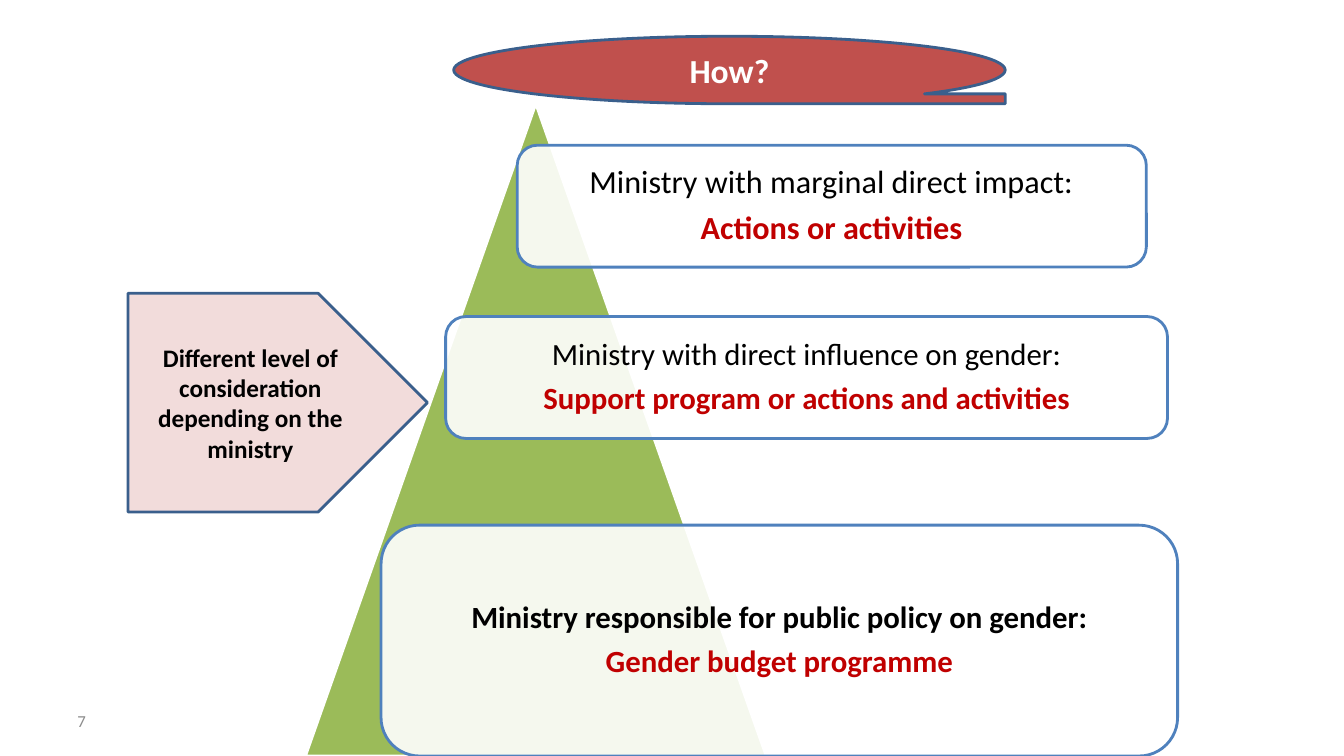
from lxml.etree import SubElement
from pptx import Presentation
from pptx.dml.color import RGBColor
from pptx.enum.shapes import MSO_SHAPE
from pptx.enum.text import MSO_ANCHOR, PP_ALIGN
from pptx.oxml.ns import qn
from pptx.util import Inches, Pt

COLORS = {
    "green": "9BBB59", "white": "FFFFFF", "blue": "4F81BD", "navy": "3A5F8C",
    "red": "C0504D", "pink": "F2DCDB", "black": "000000", "crimson": "C00000",
    "gray": "8C8C8C",
}
FONT = "Calibri"
TITLE = "How?"
TITLE_BOX = (4.5, 0.36, 5.47, 0.67)
PYRAMID_BOX = (3.03, 1.03, 4.57, 6.47)
ARROW_TEXT = "Different level of consideration depending on the ministry"
ARROW_BOX = (1.27, 2.91, 2.97, 2.17)
PAGE_NUMBER = "7"
PAGE_BOX = (0.67, 6.95, 3.11, 0.4)
LEVELS = [
    ("Ministry with marginal direct impact:", "Actions or activities",
     (5.13, 1.44, 6.24, 1.21), 23, False),
    ("Ministry with direct influence on gender:", "Support program or actions and activities",
     (4.42, 3.14, 7.16, 1.21), 22, False),
    ("Ministry responsible for public policy on gender:", "Gender budget programme",
     (3.78, 5.21, 7.9, 2.29), 22, True),
]


def color(name):
    return RGBColor.from_string(COLORS[name])


def add_shape(kind, box, fill, line):
    shape = slide.shapes.add_shape(kind, *map(Inches, box))
    shape.shadow.inherit = False
    shape.fill.solid()
    shape.fill.fore_color.rgb = color(fill)
    shape.line.color.rgb = color(line)
    shape.line.width = Pt(2)
    return shape


def write(shape, lines, align=PP_ALIGN.CENTER):
    frame = shape.text_frame
    frame.word_wrap = True
    frame.vertical_anchor = MSO_ANCHOR.MIDDLE
    frame.text = "\n".join(text for text, *_ in lines)
    for paragraph, (_, size, name, bold) in zip(frame.paragraphs, lines):
        paragraph.alignment = align
        paragraph.font.name = FONT
        paragraph.font.size = Pt(size)
        paragraph.font.bold = bold
        paragraph.font.color.rgb = color(name)


def add_level(heading, answer, box, size, bold):
    shape = add_shape(MSO_SHAPE.ROUNDED_RECTANGLE, box, "white", "blue")
    fill_color = shape.fill._xPr.find(qn("a:solidFill"))[0]
    SubElement(fill_color, qn("a:alpha"), val="90000")
    write(shape, [(heading, size, "black", bold), (answer, size, "crimson", True)])
    for paragraph in shape.text_frame.paragraphs:
        paragraph.line_spacing = 0.9
        paragraph.space_after = Pt(size * 0.35)


presentation = Presentation()
presentation.slide_width = Inches(13.33)
presentation.slide_height = Inches(7.5)
slide = presentation.slides.add_slide(presentation.slide_layouts[5])

title = slide.shapes.title
title.left, title.top, title.width, title.height = map(Inches, TITLE_BOX)
write(title, [(TITLE, 24, "white", True)])
tape = add_shape(MSO_SHAPE.FLOWCHART_SEQUENTIAL_ACCESS_STORAGE, TITLE_BOX, "red", "navy")
title._element.addprevious(tape._element)

add_shape(MSO_SHAPE.ISOSCELES_TRIANGLE, PYRAMID_BOX, "green", "white")
for level in LEVELS:
    add_level(*level)

arrow = add_shape(MSO_SHAPE.PENTAGON, ARROW_BOX, "pink", "navy")
write(arrow, [(ARROW_TEXT, 18, "black", True)])

page = slide.shapes.add_textbox(*map(Inches, PAGE_BOX))
write(page, [(PAGE_NUMBER, 12, "gray", False)], PP_ALIGN.LEFT)

presentation.save("out.pptx")
